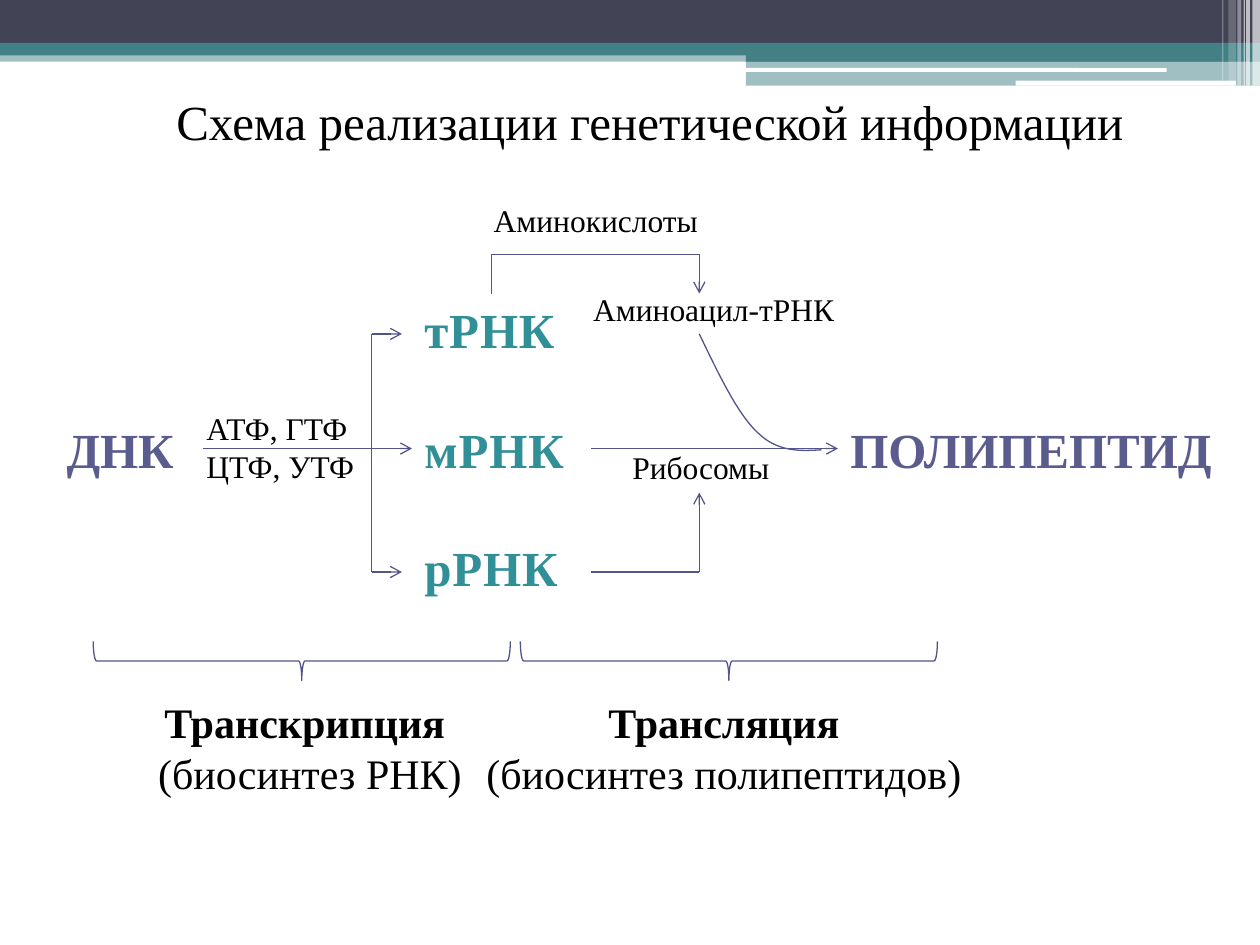
from lxml.etree import SubElement
from pptx import Presentation
from pptx.dml.color import RGBColor
from pptx.enum.shapes import MSO_CONNECTOR, MSO_SHAPE
from pptx.enum.text import MSO_ANCHOR, MSO_AUTO_SIZE, PP_ALIGN
from pptx.oxml.ns import qn
from pptx.util import Emu, Pt

PX = 9144  # 100 px to the inch
FONT = "Times New Roman"
BLACK = RGBColor(0x00, 0x00, 0x00)
WHITE = RGBColor(0xFF, 0xFF, 0xFF)
NAVY = RGBColor(0x42, 0x44, 0x56)
TEAL = RGBColor(0x43, 0x80, 0x86)
LINE = RGBColor(0x53, 0x54, 0x8A)
VIOLET = RGBColor(0x5B, 0x5C, 0x8E)
RNA_TEAL = RGBColor(0x31, 0x8F, 0x98)

# Rows and columns of the scheme
TOP, MID, BOTTOM = 265, 356, 454
FORK_X, RNA_X, OUT_X, AMINO_X, PEPTIDE_X = 295, 327, 469, 555, 665

# left, top, width, height, colour, opacity in percent
BANDS = [
    (0, 40, 1000, 9, TEAL, 50),
    (0, 0, 1000, 34, NAVY, 100),
    (0, 34, 1000, 10, TEAL, 100),
    (592, 39, 408, 10, TEAL, 100),
    (592, 48, 408, 20, TEAL, 50),
]
ROUNDED = [(591, 54, 335, 3), (806, 64, 175, 4)]
# left, width, height, opacity in percent
STRIPES = [(994, 6, 68, 65), (989, 3, 68, 65), (987, 1, 68, 60),
           (982, 3, 68, 40), (975, 6, 64, 20), (970, 1, 64, 30)]

# text, left, top, width, height, size, colour
LABELS = [
    ("ДНК", 43, 328, 118, 57, 28, VIOLET),
    ("тРНК", RNA_X, 233, 150, 57, 28, RNA_TEAL),
    ("мРНК", RNA_X, 328, 142, 57, 28, RNA_TEAL),
    ("рРНК", RNA_X, 422, 142, 57, 28, RNA_TEAL),
    ("ПОЛИПЕПТИД", PEPTIDE_X, 328, 315, 57, 28, VIOLET),
    ("АТФ, ГТФ ЦТФ, УТФ", 154, 320, 142, 71, 18, BLACK),
    ("Аминоацил-тРНК", 461, 225, 244, 40, 18, BLACK),
    ("Рибосомы", 492, 351, 150, 40, 18, BLACK),
    ("Аминокислоты", 382, 155, 189, 40, 18, BLACK),
]

# x1, y1, x2, y2, arrowhead at the end
LINES = [
    (161, MID, RNA_X, MID, True),
    (FORK_X, TOP, FORK_X, BOTTOM, False),
    (FORK_X, TOP, 319, TOP, True),
    (FORK_X, BOTTOM, 319, BOTTOM, True),
    (OUT_X, MID, PEPTIDE_X, MID, True),
    (390, 202, 390, 233, False),
    (390, 202, AMINO_X, 202, False),
    (AMINO_X, 202, AMINO_X, 233, True),
    (OUT_X, BOTTOM, AMINO_X, BOTTOM, False),
    (AMINO_X, BOTTOM, AMINO_X, 391, True),
]

# Cubic curves joined end to end
CURVES = [
    ((AMINO_X, TOP), (570, 296), (585, 328), (601, 343)),
    ((601, 343), (617, 359), (635, 358), (652, 357)),
]

# heading, note, text left, text width, brace left
STAGES = [
    ("Транскрипция ", "(биосинтез РНК)", 114, 264, 224),
    ("Трансляция", "(биосинтез полипептидов)", 374, 401, 563),
]


def px(*values):
    return [Emu(v * PX) for v in values]


def add_band(s, box, color, opacity=100, kind=MSO_SHAPE.RECTANGLE):
    sp = s.shapes.add_shape(kind, *px(*box))
    sp.shadow.inherit = False
    sp.line.fill.background()
    sp.fill.solid()
    sp.fill.fore_color.rgb = color
    if opacity < 100:
        clr = sp.fill._xPr.find(f".//{qn('a:srgbClr')}")
        SubElement(clr, qn("a:alpha"), val=str(opacity * 1000))


def add_run(p, text, size, color=BLACK, bold=False):
    r = p.add_run()
    r.text = text
    r.font.name, r.font.size, r.font.bold = FONT, Pt(size), bold
    r.font.color.rgb = color
    return r


def add_text_box(s, box, wrap=True):
    tf = s.shapes.add_textbox(*px(*box)).text_frame
    tf.word_wrap = wrap
    return tf.paragraphs[0]


def add_label(s, text, left, top, width, height, size, color):
    p = add_text_box(s, (left, top, width, height))
    r = add_run(p, text, size, color, bold=color != BLACK)
    if color == RNA_TEAL:
        r._r.get_or_add_rPr().set("spc", "50")


def style_line(sp):
    sp.line.color.rgb = LINE
    sp.line.width = Pt(0.75)


def add_line(s, x1, y1, x2, y2, arrow):
    cx = s.shapes.add_connector(MSO_CONNECTOR.STRAIGHT, *px(x1, y1, x2, y2))
    style_line(cx)
    if arrow:
        SubElement(cx.line._get_or_add_ln(), qn("a:tailEnd"), type="arrow")
    SubElement(cx._element.spPr, qn("a:effectLst"))


def bezier(points, t):
    weights = ((1 - t) ** 3, 3 * t * (1 - t) ** 2, 3 * t * t * (1 - t), t ** 3)
    return tuple(round(PX * sum(w * v for w, v in zip(weights, axis)))
                 for axis in zip(*points))


def add_curve(s, curves, steps=16):
    points = [bezier(c, i / steps) for c in curves for i in range(1, steps + 1)]
    fb = s.shapes.build_freeform(*px(*curves[0][0]))
    fb.add_line_segments(points, close=False)
    sp = fb.convert_to_shape()
    sp.shadow.inherit = False
    sp.fill.background()
    style_line(sp)


def add_stage(s, heading, note, left, width, brace_left):
    """Add a brace opening upwards and the centred caption below it."""
    brace = s.shapes.add_shape(MSO_SHAPE.LEFT_BRACE, *px(brace_left, 359, 31, 331))
    brace.rotation = 270
    brace.shadow.inherit = False
    brace.fill.background()
    style_line(brace)
    p = add_text_box(s, (left, 548, width, 91), wrap=False)
    p.alignment = PP_ALIGN.CENTER
    add_run(p, heading, 24, bold=True)
    p.add_line_break()
    add_run(p, note, 24)


def set_title(s, text):
    title = s.shapes.title
    title.left, title.top, title.width, title.height = px(130, 68, 780, 57)
    tf = title.text_frame
    tf.word_wrap = False
    tf.auto_size = MSO_AUTO_SIZE.NONE
    tf.vertical_anchor = MSO_ANCHOR.TOP
    p = tf.paragraphs[0]
    p.alignment = PP_ALIGN.LEFT
    add_run(p, text, 28)


def main():
    prs = Presentation()
    prs.slide_width, prs.slide_height = px(1000, 750)
    s = prs.slides.add_slide(prs.slide_layouts[5])
    set_title(s, "Схема реализации генетической информации")
    for *box, color, opacity in BANDS:
        add_band(s, box, color, opacity)
    for box in ROUNDED:
        add_band(s, box, WHITE, kind=MSO_SHAPE.ROUNDED_RECTANGLE)
    for left, width, height, opacity in STRIPES:
        add_band(s, (left, 0, width, height), WHITE, opacity)
    for label in LABELS:
        add_label(s, *label)
    for line in LINES:
        add_line(s, *line)
    add_curve(s, CURVES)
    for stage in STAGES:
        add_stage(s, *stage)
    prs.save("out.pptx")


if __name__ == "__main__":
    main()
